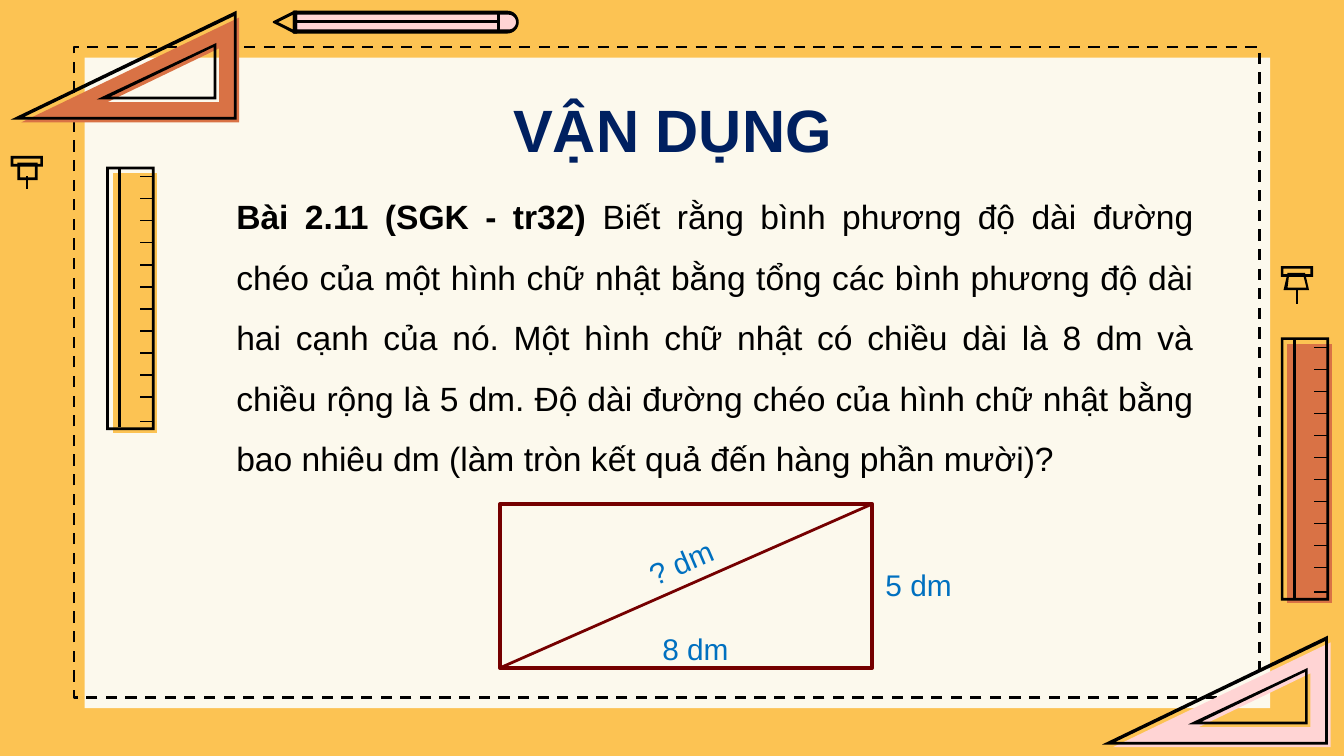
from math import cos, pi, sin

from pptx import Presentation
from pptx.dml.color import RGBColor
from pptx.enum.dml import MSO_LINE
from pptx.enum.shapes import MSO_CONNECTOR, MSO_SHAPE
from pptx.enum.text import MSO_ANCHOR, PP_ALIGN
from pptx.util import Inches, Pt
from lxml.etree import SubElement
from pptx.oxml.ns import qn

AMBER, CREAM, PINK, RUST = "FCC353", "FCF9ED", "FFD4D4", "D97245"
BLACK, NAVY, MAROON, BLUE = "000000", "002060", "750000", "0070C0"

TITLE = "VẬN DỤNG"
LEAD = "Bài 2.11 (SGK - tr32) "
TASK = (
    "Biết rằng bình phương độ dài đường chéo của một hình chữ nhật bằng tổng "
    "các bình phương độ dài hai cạnh của nó. Một hình chữ nhật có chiều dài là "
    "8 dm và chiều rộng là 5 dm. Độ dài đường chéo của hình chữ nhật bằng bao "
    "nhiêu dm (làm tròn kết quả đến hàng phần mười)?"
)
LABELS = [  # text, left, top, turn
    ("5 dm", 6.49, 4.17, 0),
    ("8 dm", 4.83, 4.64, 0),
    ("? dm", 4.72, 3.99, -23.1),
]
FIGURE = (3.72, 3.75, 2.77, 1.22)
WIDE = 10

deck = Presentation()
deck.slide_width, deck.slide_height = Inches(WIDE), Inches(WIDE * 9 / 16)
slide = deck.slides.add_slide(deck.slide_layouts[6])


def rgb(code):
    return RGBColor.from_string(code)


def rect(x, y, w, h, fill=None, line=None, width=1.5, dash=None):
    shape = slide.shapes.add_shape(MSO_SHAPE.RECTANGLE, *map(Inches, (x, y, w, h)))
    shape.shadow.inherit = False
    if fill:
        shape.fill.solid()
        shape.fill.fore_color.rgb = rgb(fill)
    else:
        shape.fill.background()
    if line:
        shape.line.color.rgb = rgb(line)
        shape.line.width = Pt(width)
        shape.line.dash_style = dash
    else:
        shape.line.fill.background()


def text(words, x, y, w, h, size=16, color=BLACK, bold=False, lead="",
         align=PP_ALIGN.LEFT, space=1, anchor=MSO_ANCHOR.TOP, turn=0):
    """Add a text box; lead is an opening run in bold."""
    box = slide.shapes.add_textbox(*map(Inches, (x, y, w, h)))
    box.rotation = turn
    frame = box.text_frame
    frame.word_wrap = True
    frame.vertical_anchor = anchor
    para = frame.paragraphs[0]
    para.alignment, para.line_spacing = align, space
    for part, heavy in ((lead, True), (words, bold)):
        if part:
            run = para.add_run()
            run.text = part
            run.font.name, run.font.size = "Arial", Pt(size)
            run.font.bold = heavy
            run.font.color.rgb = rgb(color)


def box(x, y, w, h):
    return [(x, y), (x, y + h), (x + w, y + h), (x + w, y)]


def wedge(x, y, w, h):
    """Corners of a right triangle with its right angle at lower right."""
    return [(x + w, y), (x, y + h), (x + w, y + h)]


def capsule(x, y, w, h):
    """A bar whose right end is a half circle."""
    r, steps = h / 2, 16
    turns = [pi * i / steps - pi / 2 for i in range(steps + 1)]
    arc = [(x + w - r + r * cos(a), y + r + r * sin(a)) for a in turns]
    return [(x, y), *arc, (x, y + h)]


def draw(x, y, parts):
    """Group filled outlines at x, y; a second loop in a part cuts a hole."""
    group = slide.shapes.add_group_shape()
    for fill, *loops in parts:
        pen = None
        for loop in loops:
            spots = [(Inches(x + a), Inches(y + b)) for a, b in loop]
            if pen is None:
                pen = group.shapes.build_freeform(*spots[0])
            else:
                pen.move_to(*spots[0])
            pen.add_line_segments(spots[1:], close=True)
        shape = pen.convert_to_shape()
        shape.shadow.inherit = False
        shape.fill.solid()
        shape.fill.fore_color.rgb = rgb(fill)
        shape.line.fill.background()


def pin(x, y, body, stem):
    draw(x, y, [
        (BLACK, box(0, 0, 0.24, 0.08), box(0.02, 0.02, 0.2, 0.04)),
        (BLACK, *body),
        (BLACK, box(*stem)),
    ])


def ruler(x, y, fill):
    ticks = [0.07 + 0.164 * i for i in range(11)] + [1.89]
    draw(x, y, [
        (fill, box(0.05, 0.05, 0.33, 1.93)),
        (BLACK, box(0, 0, 0.36, 1.96), box(0.02, 0.02, 0.32, 1.92)),
        *((BLACK, box(0.25, t, 0.1, 0.01)) for t in ticks),
        (BLACK, box(0.09, 0.01, 0.02, 1.93)),
    ])


def square(x, y, fill):
    """Draw a set square."""
    draw(x, y, [
        (fill, wedge(0.08, 0.05, 1.62, 0.78), wedge(0.72, 0.28, 0.83, 0.4)),
        (BLACK, wedge(0, 0, 1.68, 0.81), wedge(0.1, 0.04, 1.56, 0.75),
         wedge(0.64, 0.24, 0.89, 0.42), wedge(0.74, 0.27, 0.77, 0.37)),
    ])


def pencil(x, y):
    draw(x, y, [
        (PINK, capsule(0.17, 0.01, 1.65, 0.15)),
        (BLACK, capsule(0.15, 0, 1.68, 0.17), capsule(0.18, 0.03, 1.63, 0.11)),
        (BLACK, box(1.67, 0.01, 0.02, 0.15)),
        (BLACK, [(0.18, 0), (0.16, 0), (0, 0.08), (0, 0.09), (0.16, 0.17), (0.18, 0.17)],
         [(0.15, 0.03), (0.04, 0.085), (0.15, 0.14)]),
        (BLACK, box(0.15, 0.07, 1.54, 0.02)),
    ])


slide.background.fill.solid()
slide.background.fill.fore_color.rgb = rgb(AMBER)
rect(0.63, 0.43, 8.82, 4.84, fill=CREAM)
rect(0.55, 0.35, 8.82, 4.84, line=BLACK, dash=MSO_LINE.DASH)

taper = ([(0.05, 0.05), (0.18, 0.05), (0.21, 0.18), (0.02, 0.18)],
         [(0.06, 0.08), (0.17, 0.08), (0.19, 0.16), (0.05, 0.16)])
block = (box(0.05, 0.05, 0.15, 0.13), box(0.07, 0.07, 0.11, 0.09))
pin(9.53, 1.98, taper, (0.11, 0.16, 0.02, 0.12))
ruler(9.53, 2.51, RUST)
square(8.2, 4.73, PINK)
square(0.08, 0.08, RUST)
pencil(2.03, 0.08)
pin(0.08, 1.16, block, (0.11, 0.15, 0.02, 0.1))
ruler(0.79, 1.24, AMBER)

text(TITLE, 0.79, 0.59, 8.43, 0.74, size=32, color=NAVY, bold=True,
     align=PP_ALIGN.CENTER, anchor=MSO_ANCHOR.MIDDLE)
text(TASK, 1.66, 1.26, 7.32, 2.37, size=18, lead=LEAD,
     align=PP_ALIGN.JUSTIFY, space=1.5)

rect(*FIGURE, fill=CREAM, line=MAROON, width=2)
left, top, wide, high = FIGURE
diagonal = slide.shapes.add_connector(
    MSO_CONNECTOR.STRAIGHT, *map(Inches, (left + wide, top, left, top + high)))
diagonal.line.color.rgb = rgb(MAROON)
diagonal.line.width = Pt(1.5)
SubElement(diagonal.element.spPr, qn("a:effectLst"))
for words, x, y, turn in LABELS:
    text(words, x, y, 0.74, 0.37, color=BLUE, turn=turn)

deck.save("out.pptx")
